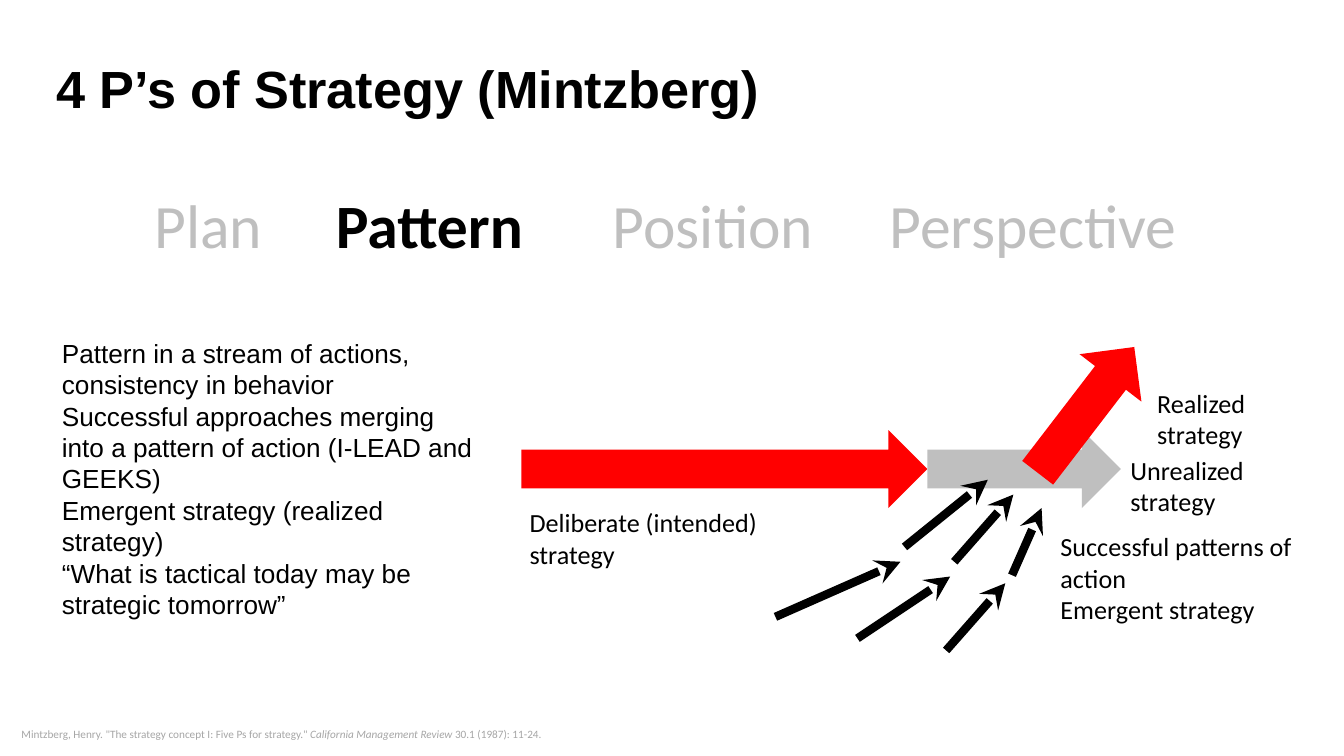
from lxml import etree
from pptx import Presentation
from pptx.dml.color import RGBColor
from pptx.enum import shapes, text
from pptx.oxml import ns
from pptx.util import Inches, Pt

COLORS = {"ink": "000000", "red": "FF0000", "muted": "BFBFBF", "citation": "A6A6A6"}


def rgb(name):
    """Look up a colour of the palette."""
    return RGBColor.from_string(COLORS[name])


def add_text(parent, box, paragraphs, size=14, font="Calibri", color="ink", bold=False,
             insets=(0.07, 0.04), anchor=text.MSO_ANCHOR.TOP, line_spacing=None):
    """Add a text box; each paragraph is a list of (words, italic) runs or a string."""
    frame = parent.add_textbox(*map(Inches, box)).text_frame
    frame.word_wrap = True
    frame.vertical_anchor = anchor
    frame.margin_left = frame.margin_right = Inches(insets[0])
    frame.margin_top = frame.margin_bottom = Inches(insets[1])
    for index, content in enumerate(paragraphs):
        paragraph = frame.paragraphs[0] if index == 0 else frame.add_paragraph()
        paragraph.line_spacing = line_spacing
        for words, italic in [(content, False)] if isinstance(content, str) else content:
            run = paragraph.add_run()
            run.text = words
            run.font.name, run.font.size = font, Pt(size)
            run.font.bold, run.font.italic = bold, italic
            run.font.color.rgb = rgb(color)


def add_block_arrow(parent, box, color, rotation=0):
    """Add a filled right arrow without outline."""
    arrow = parent.add_shape(shapes.MSO_SHAPE.RIGHT_ARROW, *map(Inches, box))
    arrow.shadow.inherit = False
    arrow.fill.solid()
    arrow.fill.fore_color.rgb = rgb(color)
    arrow.line.fill.background()
    arrow.rotation = rotation


def add_action_arrow(parent, start, end):
    """Add a thick line with a stealth arrowhead at its end."""
    action = parent.add_connector(shapes.MSO_CONNECTOR.STRAIGHT, *map(Inches, start + end))
    action.line.color.rgb = rgb("ink")
    action.line.width = Pt(4.5)
    properties = action._element.spPr
    etree.SubElement(properties.find(ns.qn("a:ln")), ns.qn("a:tailEnd"), type="stealth")
    etree.SubElement(properties, ns.qn("a:effectLst"))


def add_title(parent, box):
    """Place the slide title."""
    add_text(parent, box, ["4 P’s of Strategy (Mintzberg)"], size=28, font="Arial", bold=True,
             insets=(0.1, 0.05), anchor=text.MSO_ANCHOR.MIDDLE, line_spacing=0.9)


def add_four_ps(parent, left, top, current):
    """Place the row of four words and highlight the current one."""
    words = [("Plan", 0, 0.98), ("Pattern", 1.35, 1.7),
             ("Position", 3.41, 1.7), ("Perspective", 5.47, 2.36)]
    for word, offset, width in words:
        active = word == current
        add_text(parent, (left + offset, top, width, 0.63), [word], size=33,
                 color="ink" if active else "muted", bold=active)


def add_explanation(parent, box):
    """Place the description of the pattern view."""
    add_text(parent, box, [
        "Pattern in a stream of actions, consistency in behavior",
        "Successful approaches merging into a pattern of action (I-LEAD and GEEKS)",
        "Emergent strategy (realized strategy)",
        "“What is tactical today may be strategic tomorrow”",
    ], font="Arial")


def add_strategy_diagram(parent, left, top):
    """Place the strategy arrows and their labels from the diagram's top left corner."""
    flows = [
        ("Deliberate (intended) strategy", "red", (0.01, 0.44, 3.02, 0.58), 0, (0, 0.97, 2.46, 0.55)),
        ("Unrealized strategy", "muted", (3.03, 0.44, 1.44, 0.58), 0, (4.47, 0.58, 1.63, 0.55)),
        ("Realized strategy", "red", (3.62, 0, 1.18, 0.58), 307.5, (4.67, 0.08, 1.45, 0.55)),
    ]
    for label, color, (x, y, *size), rotation, (label_x, label_y, *label_size) in flows:
        flow = parent.add_group_shape().shapes
        add_block_arrow(flow, (left + x, top + y, *size), color, rotation)
        add_text(flow, (left + label_x, top + label_y, *label_size), [label])

    actions = [
        ((1.9, 1.83), (2.83, 1.42)), ((2.51, 1.99), (3.2, 1.53)),
        ((3.23, 1.42), (3.67, 0.92)), ((2.86, 1.31), (3.48, 0.81)),
        ((3.17, 2.08), (3.61, 1.58)), ((3.66, 1.52), (3.88, 1.02)),
    ]
    emergent = parent.add_group_shape().shapes
    for start, end in actions:
        add_action_arrow(emergent, *[(left + x, top + y) for x, y in (start, end)])
    add_text(emergent, (left + 3.95, top + 1.15, 2.35, 0.78),
             ["Successful patterns of action", "Emergent strategy"])


def add_citation(parent, box):
    """Place the source reference."""
    add_text(parent, box, [[
        ('Mintzberg, Henry. "The strategy concept I: Five Ps for strategy." ', False),
        ("California Management Review", True),
        (" 30.1 (1987): 11-24.", False),
    ]], size=6, color="citation")


def main():
    """Build the slide and save it."""
    deck = Presentation()
    deck.slide_width = Inches(10)
    deck.slide_height = deck.slide_width * 9 // 16
    canvas = deck.slides.add_slide(deck.slide_layouts[6]).shapes
    add_title(canvas, (0.32, 0.1, 6.9, 1.17))
    add_four_ps(canvas, 1.08, 1.35, current="Pattern")
    add_explanation(canvas, (0.39, 2.47, 3.21, 2.2))
    add_strategy_diagram(canvas, 3.87, 2.76)
    add_citation(canvas, (0.09, 5.37, 7, 0.18))
    deck.save("out.pptx")


if __name__ == "__main__":
    main()
